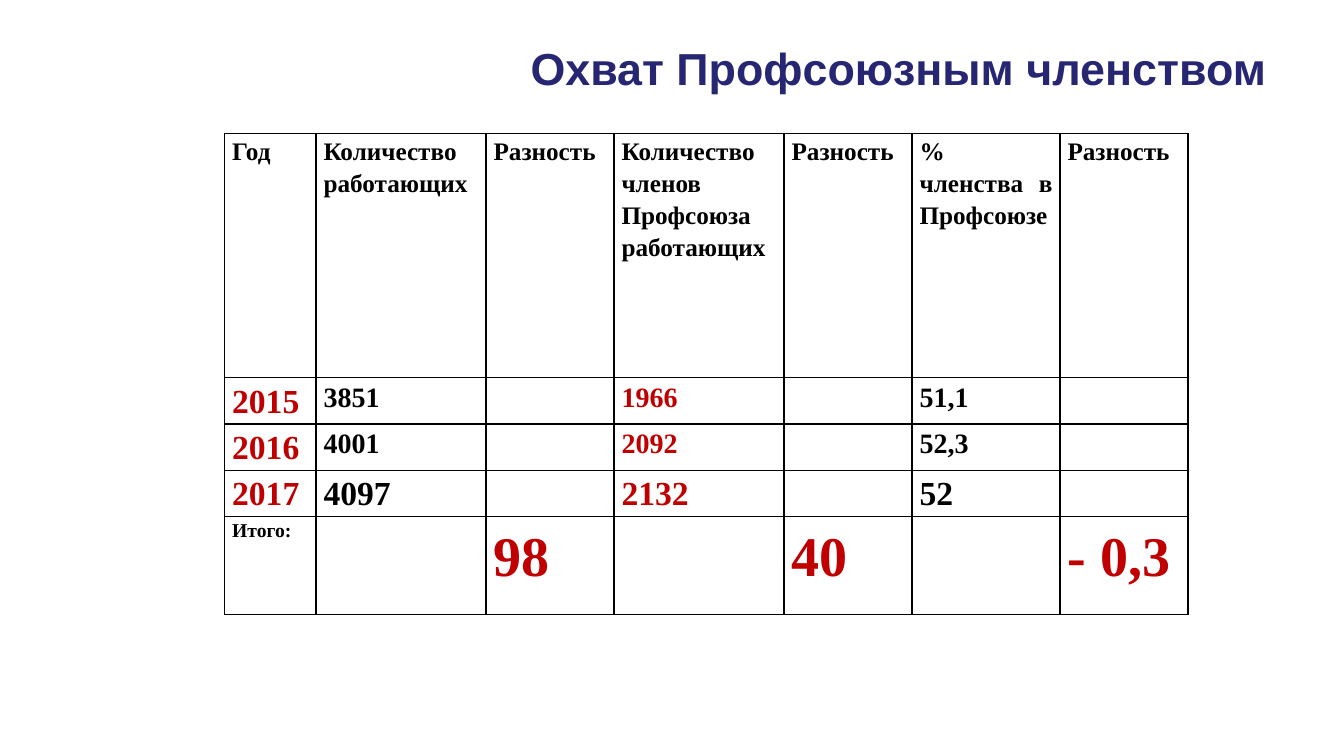
from dataclasses import dataclass
from typing import Optional

from lxml import etree
from pptx import Presentation
from pptx.dml.color import RGBColor
from pptx.enum.text import MSO_ANCHOR, PP_ALIGN
from pptx.oxml.ns import qn
from pptx.util import Pt

RIGHT = PP_ALIGN.RIGHT
JUSTIFY = PP_ALIGN.JUSTIFY
MIDDLE = MSO_ANCHOR.MIDDLE
HUES = {"navy": "262673", "black": "000000", "red": "C00000", "white": "FFFFFF"}
WIDTHS = [65.3, 121.5, 91.4, 121.5, 91.4, 105.7, 91.4]
HEIGHTS = [174.3, 30.5, 30.5, 30.5, 70]


@dataclass
class Entry:
    text: str
    size: float
    hue: str = "black"


Row = list[Optional[Entry]]


def year_row(year: str, staff: str, members: str, share: str, size: float) -> Row:
    return [Entry(year, 24, "red"), Entry(staff, size), None,
            Entry(members, size, "red"), None, Entry(share, size), None]


def total(text: str) -> Entry:
    return Entry(text, 40, "red")


HEADS = ["Год", "Количество работающих", "Разность",
         "Количество членов Профсоюза работающих", "Разность",
         "% членства в Профсоюзе", "Разность"]
ROWS: list[Row] = [
    [Entry(head, 18) for head in HEADS],
    year_row("2015", "3851", "1966", "51,1", 20),
    year_row("2016", "4001", "2092", "52,3", 20),
    year_row("2017", "4097", "2132", "52", 24),
    [Entry("Итого:", 14), None, total("98"), None, total("40"), None, total("- 0,3")],
]


def write(para, entry: Entry, face: str, align) -> None:
    para.text = entry.text
    para.alignment = align
    font = para.font
    font.name = face
    font.size = Pt(entry.size)
    font.bold = True
    font.color.rgb = RGBColor.from_string(HUES[entry.hue])


def add_edges(cell) -> None:
    props = cell._tc.get_or_add_tcPr()
    for spot, side in enumerate(("lnL", "lnR", "lnT", "lnB")):
        line = etree.Element(qn(f"a:{side}"), w=str(Pt(1)))
        fill = etree.SubElement(line, qn("a:solidFill"))
        etree.SubElement(fill, qn("a:srgbClr"), val=HUES["black"])
        props.insert(spot, line)


def fill_cell(cell, entry: Optional[Entry]) -> None:
    cell.fill.solid()
    cell.fill.fore_color.rgb = RGBColor.from_string(HUES["white"])
    cell.margin_left = cell.margin_right = Pt(5.4)
    cell.margin_top = cell.margin_bottom = Pt(0)
    add_edges(cell)
    if entry:
        para = cell.text_frame.paragraphs[0]
        write(para, entry, "Times New Roman", JUSTIFY)
        para.line_spacing = 1.15


def add_title(slide) -> None:
    frame = slide.shapes.add_textbox(Pt(48), Pt(21.6), Pt(864), Pt(53.3)).text_frame
    frame.word_wrap = True
    frame.vertical_anchor = MIDDLE
    write(frame.paragraphs[0], Entry("Охват Профсоюзным членством", 32, "navy"),
          "Arial", RIGHT)


def add_grid(slide) -> None:
    grid = slide.shapes.add_table(len(ROWS), len(WIDTHS), Pt(160.4), Pt(95.5),
                                  Pt(sum(WIDTHS)), Pt(sum(HEIGHTS))).table
    grid.first_row = False
    grid.horz_banding = False
    for col, width in zip(grid.columns, WIDTHS):
        col.width = Pt(width)
    for row, height, entries in zip(grid.rows, HEIGHTS, ROWS):
        row.height = Pt(height)
        for cell, entry in zip(row.cells, entries):
            fill_cell(cell, entry)


def main() -> None:
    deck = Presentation()
    deck.slide_width = Pt(960)
    deck.slide_height = Pt(540)
    slide = deck.slides.add_slide(deck.slide_layouts[6])
    add_title(slide)
    add_grid(slide)
    deck.save("out.pptx")


if __name__ == "__main__":
    main()
